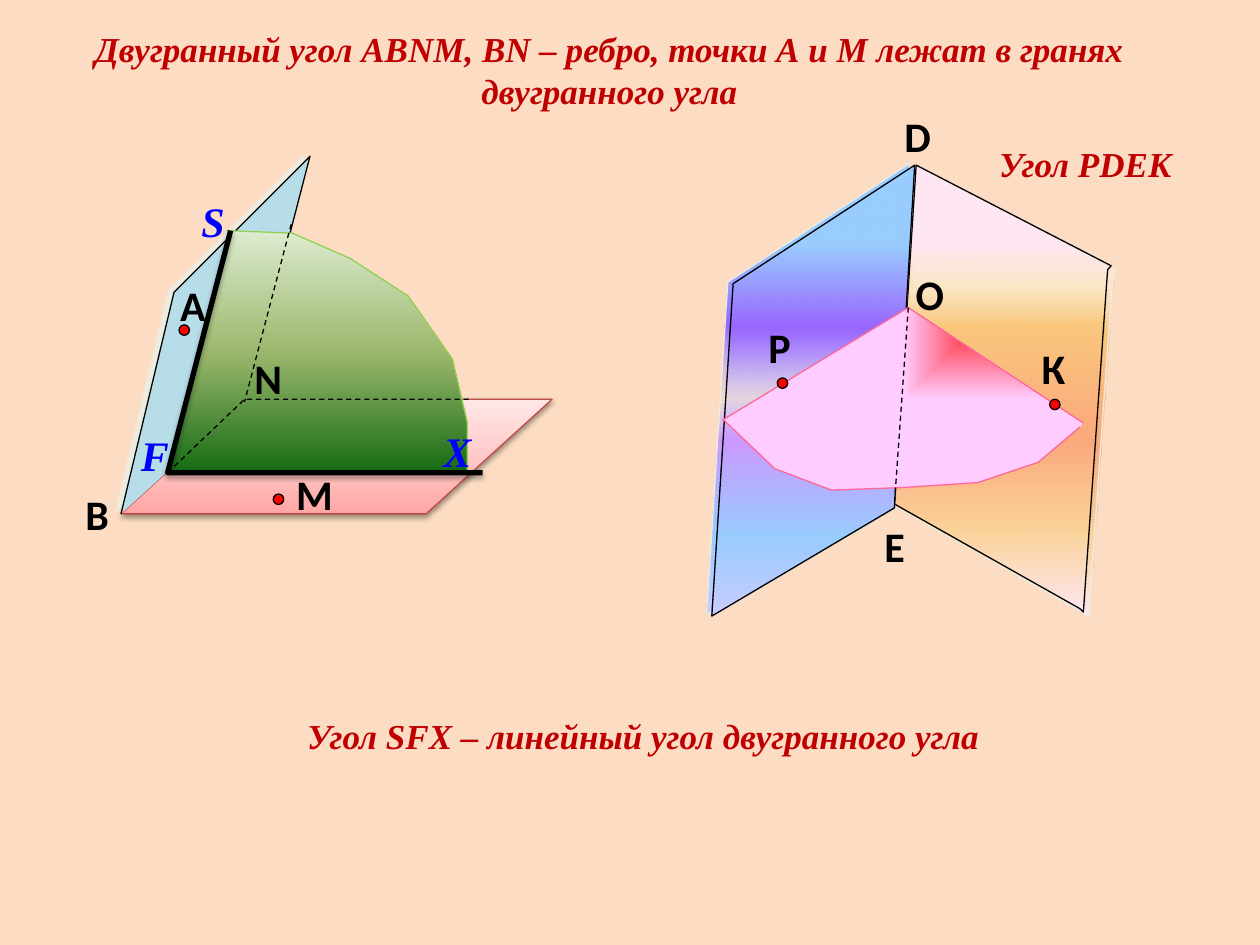
from lxml import etree
from pptx import Presentation
from pptx.dml.color import RGBColor
from pptx.enum.dml import MSO_LINE
from pptx.enum.shapes import MSO_CONNECTOR, MSO_SHAPE
from pptx.enum.text import MSO_ANCHOR, MSO_AUTO_SIZE, PP_ALIGN
from pptx.oxml.ns import qn
from pptx.util import Cm, Pt

DASH = MSO_LINE.DASH
STRAIGHT = MSO_CONNECTOR.STRAIGHT
OVAL = MSO_SHAPE.OVAL
CENTER, LEFT = PP_ALIGN.CENTER, PP_ALIGN.LEFT
TOP = MSO_ANCHOR.TOP
NO_FIT = MSO_AUTO_SIZE.NONE

HEADING = dict(size=20, font="Times New Roman", color="C00000", italic=True)
BLUE_LETTER = dict(font="Times New Roman", color="0000FF", italic=True)


def rgb(color):
    return RGBColor.from_string(color)


def add_text(tf, text, size=24, font="Calibri", color="000000",
             bold=True, italic=False, align=LEFT, wrap=True):
    tf.word_wrap = wrap
    tf.auto_size = NO_FIT
    tf.vertical_anchor = TOP
    p = tf.paragraphs[0]
    p.alignment = align
    r = p.add_run()
    r.text = text
    r.font.size, r.font.name = Pt(size), font
    r.font.bold, r.font.italic = bold, italic
    r.font.color.rgb = rgb(color)


def add_box(s, x, y, w, h, text, **fmt):
    sp = s.shapes.add_textbox(Cm(x), Cm(y), Cm(w), Cm(h))
    add_text(sp.text_frame, text, **fmt)


def add_color(parent, color, alpha=100):
    clr = etree.SubElement(parent, qn("a:srgbClr"), val=color)
    if alpha < 100:
        etree.SubElement(clr, qn("a:alpha"), val=str(alpha * 1000))


def set_gradient(sp, stops, angle=None):
    sp.fill.background()
    spPr = sp._element.spPr
    grad = etree.Element(qn("a:gradFill"), rotWithShape="1")
    gs_list = etree.SubElement(grad, qn("a:gsLst"))
    for pos, *color in stops:
        gs = etree.SubElement(gs_list, qn("a:gs"), pos=str(pos * 1000))
        add_color(gs, *color)
    if angle is None:
        corner = etree.SubElement(grad, qn("a:path"), path="rect")
        etree.SubElement(corner, qn("a:fillToRect"), l="100000", b="100000")
    else:
        etree.SubElement(grad, qn("a:lin"), ang=str(angle * 60000), scaled="0")
    spPr.replace(spPr.find(qn("a:noFill")), grad)


def set_shadow(sp, color, alpha, blur, dist, angle):
    effects = sp._element.spPr.find(qn("a:effectLst"))
    shadow = etree.SubElement(
        effects, qn("a:outerShdw"), blurRad=str(Pt(blur)), dist=str(Pt(dist)),
        dir=str(angle * 60000), algn="ctr", rotWithShape="0")
    add_color(shadow, color, alpha)


def set_line(sp, color="000000", width=0.75, dash=None):
    sp.line.color.rgb = rgb(color)
    sp.line.width = Pt(width)
    if dash:
        sp.line.dash_style = dash


def add_outline(s, x, y, points, close=False, fill=None, stops=None,
                angle=None, shadow=None, **line):
    pts = [(Cm(x + px), Cm(y + py)) for px, py in points]
    fb = s.shapes.build_freeform(*pts[0])
    fb.add_line_segments(pts[1:], close=close)
    sp = fb.convert_to_shape()
    sp.shadow.inherit = False
    if stops:
        set_gradient(sp, stops, angle)
    elif fill:
        sp.fill.solid()
        sp.fill.fore_color.rgb = rgb(fill)
    else:
        sp.fill.background()
    set_line(sp, **line)
    if shadow:
        set_shadow(sp, *shadow)


def add_hidden_edge(s, x, y, start, end):
    cx = s.shapes.add_connector(STRAIGHT, Cm(x + start[0]), Cm(y + start[1]),
                                Cm(x + end[0]), Cm(y + end[1]))
    set_line(cx, dash=DASH)
    etree.SubElement(cx._element.spPr, qn("a:effectLst"))


def add_letters(s, x, y, letters, **fmt):
    for letter, dx, dy in letters:
        add_box(s, x + dx, y + dy, 1.27, 1.27, letter, **fmt)


def add_dots(s, x, y, dots):
    for dx, dy in dots:
        sp = s.shapes.add_shape(OVAL, Cm(x + dx), Cm(y + dy), Cm(0.21), Cm(0.21))
        sp.shadow.inherit = False
        sp.fill.solid()
        sp.fill.fore_color.rgb = rgb("FF0000")
        set_line(sp)


def add_linear_angle(s, x, y):
    b, n, f = (0.94, 7.36), (3.48, 5.05), (1.88, 6.53)
    add_outline(s, x, y, [b, n, (9.63, 5.05), (7.09, 7.36)], close=True,
                stops=[(0, "FFA6A5"), (35, "FFC0BF"), (100, "FFE7E7")],
                angle=270, color="BF4C48", shadow=("000000", 38, 3.1, 1.6, 90))
    add_outline(s, x, y, [n, (4.75, 0.15), (2.01, 2.89), b],
                fill="B7DEE8", shadow=("EEECE1", 100, 0, 3.2, 198))
    add_outline(s, x, y, [(3.17, 1.75), f, (7.92, 6.53), (7.92, 5.51),
                          (7.62, 4.24), (6.73, 2.97), (5.56, 2.21),
                          (4.39, 1.7), (3.07, 1.65)],
                stops=[(0, "DDEBCF"), (50, "9CB86E"), (100, "156B13")],
                angle=90, color="92D050")
    add_outline(s, x, y, [(7.95, 5.05), (3.43, 5.05), f], dash=DASH)
    add_hidden_edge(s, x, y, (4.37, 1.52), (3.43, 5.1))
    add_dots(s, x, y, [(2.11, 3.55), (4.01, 6.96)])
    add_letters(s, x, y, [("А", 1.88, 2.51), ("В", -0.03, 6.73),
                          ("N", 3.38, 3.99), ("M", 4.22, 6.32)])
    add_letters(s, x, y, [("S", 2.31, 0.81), ("X", 7.19, 5.46),
                          ("F", 1.09, 5.53)], **BLUE_LETTER)
    add_outline(s, x, y, [(3.15, 1.65), f, (8.23, 6.53)], width=3,
                shadow=("000000", 35, 3.1, 1.8, 90))


def add_dihedral_angle(s, x, y):
    o, e = (4.31, 4.2), (4.03, 8.16)
    add_outline(s, x, y, [(7.77, 10.27), e, (4.47, 1.33), (8.4, 3.36),
                          (8.33, 3.44), (7.84, 10.34)], close=True,
                stops=[(18, "FEE7F2"), (27, "FBEAC7", 52), (36, "FAC77D"),
                       (61, "FBA97D"), (82, "FBD49C"), (100, "FEE7F2")],
                angle=90, shadow=("EEECE1", 100, 0, 4.2, 45))
    add_outline(s, x, y, [(0.35, 10.42), (4.03, 8.24), (4.44, 1.33),
                          (0.78, 3.72)], close=True,
                stops=[(18, "99CCFF"), (36, "9966FF"), (52, "CCCCFF", 25),
                       (61, "CC99FF"), (82, "99CCFF"), (100, "CCCCFF")],
                angle=90, shadow=("EEECE1", 100, 0, 3.2, 198))
    add_outline(s, x, y, [(7.84, 6.53), o, (0.58, 6.46), (1.62, 7.45),
                          (2.76, 7.88), (4.19, 7.83), (5.71, 7.73),
                          (6.93, 7.32), (7.77, 6.61)],
                stops=[(0, "FF0000"), (100, "FFCCFF")], color="FF6699")
    add_hidden_edge(s, x, y, o, e)
    add_dots(s, x, y, [(7.16, 6.05), (1.67, 5.62)])
    add_letters(s, x, y, [("O", 4.21, 3.28), ("Р", 1.24, 4.35),
                          ("К", 6.75, 4.78), ("D", 3.98, 0.11),
                          ("E", 3.58, 8.36)])
    add_box(s, x + 5.89, y + 0.74, 4.19, 1.12, "Угол РDEK", wrap=False, **HEADING)


def add_title(s, x, y, w, h, text):
    sp = s.shapes.title
    sp.left, sp.top, sp.width, sp.height = Cm(x), Cm(y), Cm(w), Cm(h)
    add_text(sp.text_frame, text, align=CENTER, **HEADING)


def main():
    prs = Presentation()
    prs.slide_width, prs.slide_height = Cm(25.4), Cm(19.05)
    s = prs.slides.add_slide(prs.slide_layouts[5])
    s.background.fill.solid()
    s.background.fill.fore_color.rgb = rgb("FCDDC3")
    add_title(s, 0.64, 0.43, 23.29, 1.96,
              "Двугранный угол АВNМ, ВN – ребро, точки А и М лежат в гранях "
              "двугранного угла")
    add_dihedral_angle(s, 14, 2)
    add_linear_angle(s, 1.5, 3)
    add_box(s, 5.94, 14.27, 15.27, 1.12,
            "Угол SFX – линейный угол двугранного угла", **HEADING)
    prs.save("out.pptx")


if __name__ == "__main__":
    main()
